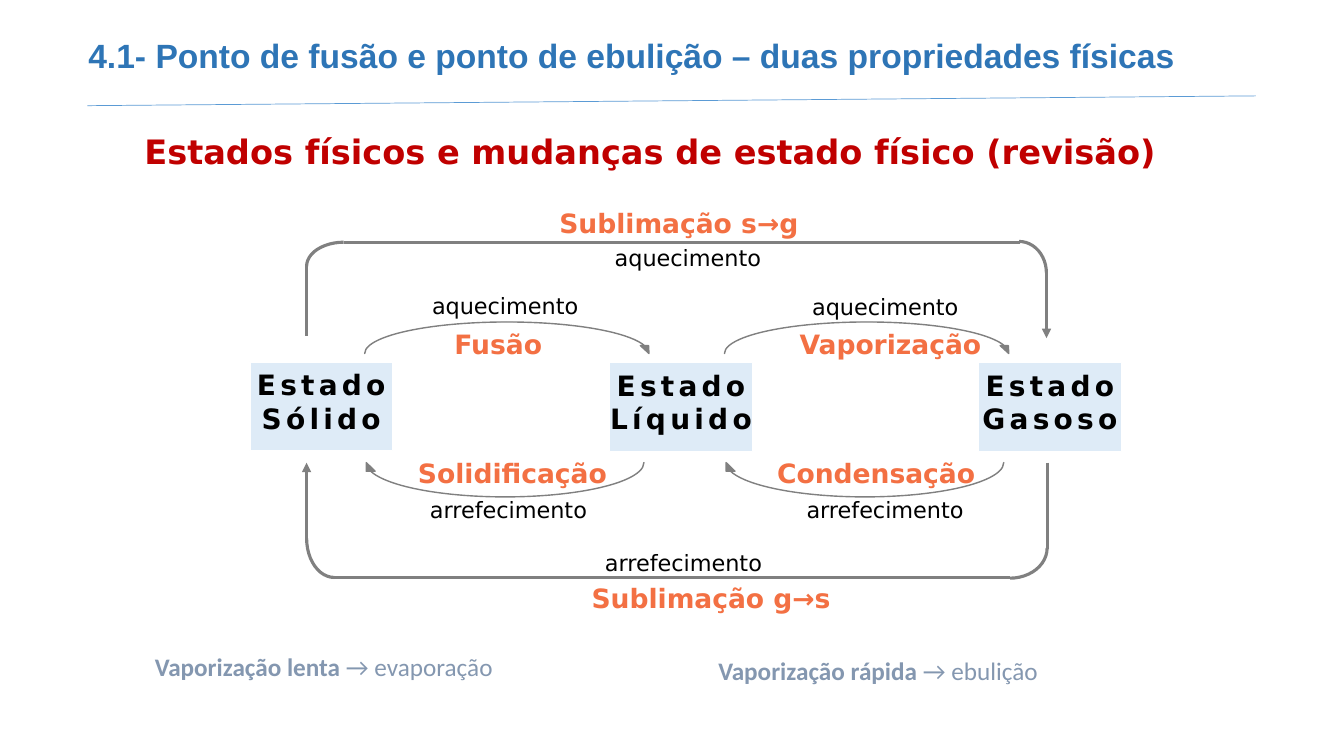
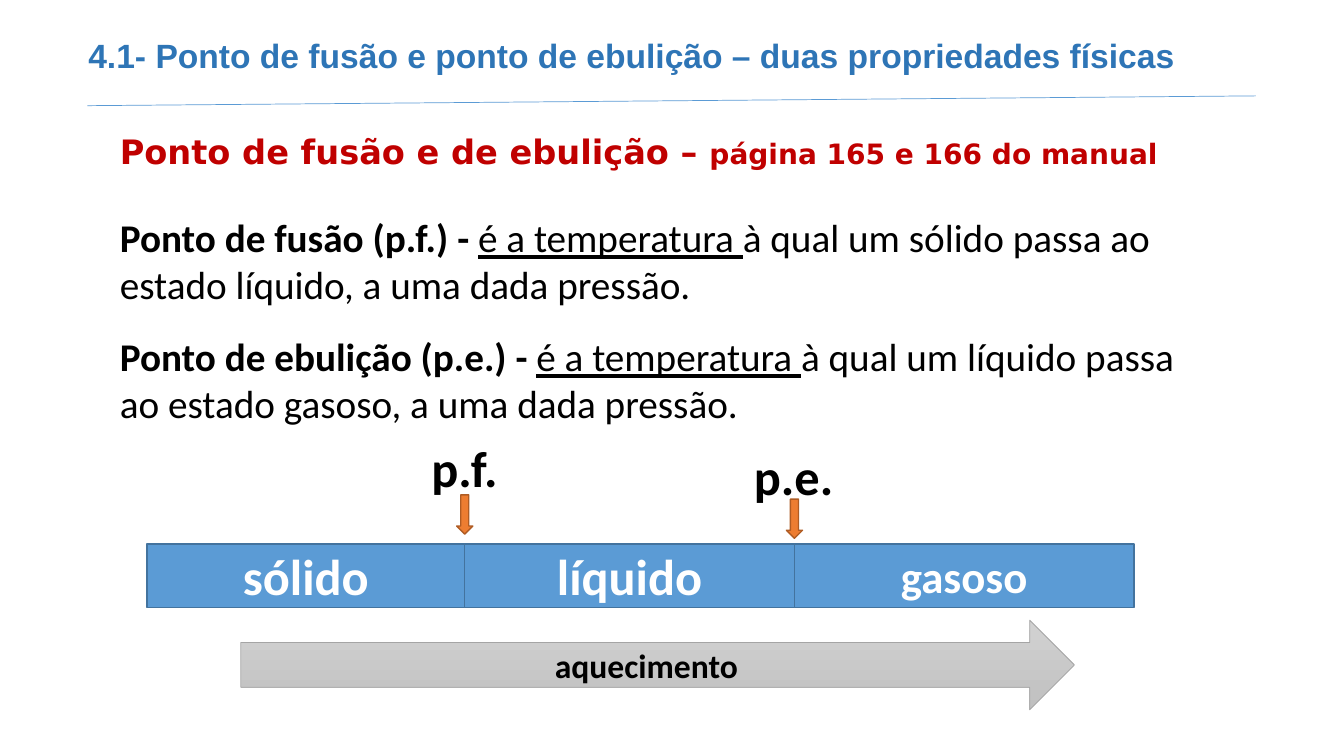
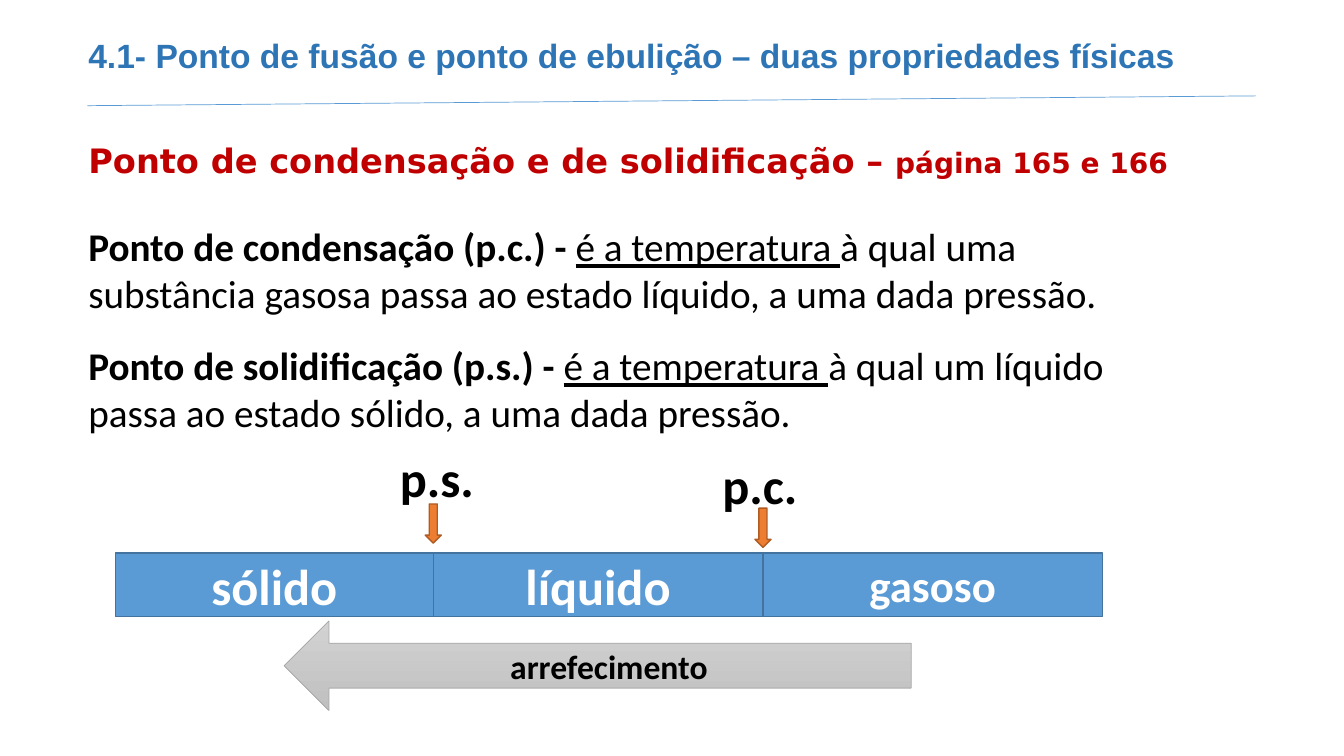
from lxml.etree import SubElement
from pptx import Presentation
from pptx.dml.color import RGBColor
from pptx.enum.shapes import MSO_CONNECTOR, MSO_SHAPE as Preset
from pptx.enum.text import MSO_ANCHOR as Anchor, MSO_AUTO_SIZE as AutoSize, PP_ALIGN as Align
from pptx.oxml.ns import qn
from pptx.util import Pt

GREY = "808080"
CHAPTER = "4.1- Ponto de fusão e ponto de ebulição – duas propriedades físicas"


def font_style(name, size, color, bold=False, **extra):
    return dict(name=name, size=Pt(size), color=color, bold=bold, **extra)


TITLE = font_style("Arial", 24, "2E75B6", True)
HEADING = font_style("DejaVu Sans", 24, "C00000", True)
PAGE_REF = HEADING | dict(size=Pt(20))
STATE = font_style("DejaVu Sans", 20, "000000", True, tracking=300)
CHANGE = font_style("DejaVu Sans", 19, "F37043", True)
FACTOR = font_style("DejaVu Sans", 16, "000000")
NOTE = font_style("Calibri", 18, "8497B0")
NOTE_TERM = NOTE | dict(bold=True)
BODY = font_style("Calibri", 28, "000000")
TERM = BODY | dict(bold=True)
KEY = BODY | dict(underline=True)
POINT = TERM | dict(size=Pt(36))
HEAT = TERM | dict(size=Pt(24))
BAND = POINT | dict(color="FFFFFF")
SMALL_BAND = BAND | dict(size=Pt(32))


def rgb(value):
    return RGBColor.from_string(value)


def pts(*lengths):
    return [Pt(length) for length in lengths]


def set_all(target, values):
    for name, value in values.items():
        setattr(target, name, value)


def write(frame, lines, align=Align.LEFT, **frame_format):
    set_all(frame, frame_format)
    for index, runs in enumerate(lines):
        paragraph = frame.add_paragraph() if index else frame.paragraphs[0]
        paragraph.alignment = align
        for text, style in runs:
            run = paragraph.add_run()
            run.text = text
            values = dict(style)
            run.font.color.rgb = rgb(values.pop("color"))
            tracking = values.pop("tracking", None)
            set_all(run.font, values)
            if tracking:
                run._r.get_or_add_rPr().set("spc", str(tracking))


def add_text(shapes, box, *runs, wrap=True):
    textbox = shapes.add_textbox(*pts(*box))
    write(textbox.text_frame, [runs], word_wrap=wrap, auto_size=AutoSize.SHAPE_TO_FIT_TEXT)


def add_preset(shapes, preset, box, fill, outline, weight=1, flip=""):
    shape = shapes.add_shape(preset, *pts(*box))
    shape.shadow.inherit = False
    if fill:
        shape.fill.solid()
        shape.fill.fore_color.rgb = rgb(fill)
    else:
        shape.fill.background()
    shape.line.color.rgb = rgb(outline)
    shape.line.width = Pt(weight)
    set_all(shape.element.spPr.xfrm, {"flip" + axis: True for axis in flip})
    return shape


def add_line(shapes, ends, color, weight, arrow=False):
    connector = shapes.add_connector(MSO_CONNECTOR.STRAIGHT, *pts(*ends))
    connector.line.color.rgb = rgb(color)
    connector.line.width = Pt(weight)
    properties = connector.element.spPr
    if arrow:
        SubElement(properties.find(qn("a:ln")), qn("a:tailEnd"), type="triangle")
    SubElement(properties, qn("a:effectLst"))


def add_sublimation_path(shapes, corners, segments):
    path_shapes = shapes.add_group_shape().shapes
    for box, flip in corners:
        add_preset(path_shapes, Preset.ARC, box, None, GREY, 2.25, flip)
    for ends in segments:
        add_line(path_shapes, ends, GREY, 2.25, arrow=ends == segments[-1])


def add_curved_arrow(shapes, box, flip=""):
    arrow = add_preset(shapes, Preset.CURVED_DOWN_ARROW, box, GREY, GREY, flip=flip)
    for index, value in enumerate((0, 0.26, 0.25)):
        arrow.adjustments[index] = value


def add_state(shapes, name, left, top):
    state = add_preset(shapes, Preset.RECTANGLE, (left, top, 102, 63.5), "DEEBF7", "FFFFFF")
    write(state.text_frame, [[("Estado", STATE)], [(name, STATE)]], Align.CENTER,
          word_wrap=False, vertical_anchor=Anchor.TOP,
          margin_left=0, margin_right=0, margin_top=Pt(4), margin_bottom=0)


def add_heat_arrow(shapes, preset, box, label):
    arrow = add_preset(shapes, preset, box, None, "A5A5A5", 0.5)
    arrow.fill.gradient()
    arrow.fill.gradient_angle = 270
    for stop, color in zip(arrow.fill.gradient_stops, ("D2D2D2", "C0C0C0")):
        stop.color.rgb = rgb(color)
    write(arrow.text_frame, [[(label, HEAT)]], Align.CENTER, vertical_anchor=Anchor.MIDDLE)


def add_page(deck):
    shapes = deck.slides.add_slide(deck.slide_layouts[6]).shapes
    add_line(shapes, (62.5, 75.5, 897, 68.5), "5B9BD5", 0.5)
    add_text(shapes, (56, 21.5, 790.5, 36), (CHAPTER, TITLE), wrap=False)
    return shapes


def build_state_changes(shapes):
    add_text(shapes, (96, 90, 741.5, 36),
             ("Estados físicos e mudanças de estado físico (revisão)", HEADING), wrap=False)

    for name, left, top in (("Sólido", 178.5, 258.5), ("Líquido", 435.5, 259), ("Gasoso", 699, 259)):
        add_state(shapes, name, left, top)

    add_sublimation_path(
        shapes,
        [((708.5, 172.5, 39, 45), ""), ((219, 173, 53, 34.5), "H")],
        [(219, 240, 219, 189.5), (245.5, 173, 728.5, 173), (747.5, 195, 747.5, 241.5)])
    add_sublimation_path(
        shapes,
        [((219, 356.5, 39.5, 56), "HV"), ((695, 370, 53, 43), "V")],
        [(748, 330.5, 748, 392.5), (721.5, 412.5, 237.5, 412.5), (219, 385, 219, 330.5)])

    for left in (260.5, 517.5):
        add_curved_arrow(shapes, (left, 230, 206, 22.5))
        add_curved_arrow(shapes, (left - 2, 330.5, 201.5, 24.5), "HV")

    for name, left, top, width in (
            ("Sublimação s→g", 392.5, 144, 227.5), ("Sublimação g→s", 415.5, 412, 264),
            ("Fusão", 317.5, 230.5, 187), ("Vaporização", 564, 231, 187),
            ("Solidificação", 291.5, 322.5, 187), ("Condensação", 548, 322.5, 187)):
        add_text(shapes, (left, top, width, 30), (name, CHANGE))

    for name, places in (
            ("aquecimento", ((432, 170.5), (301.5, 205), (573, 206))),
            ("arrefecimento", ((300, 350.5), (569, 350.5), (425, 389)))):
        for left, top in places:
            add_text(shapes, (left, top, 187, 26.5), (name, FACTOR))

    for term, meaning, left, top, width in (
            ("Vaporização lenta ", "→ evaporação", 103.5, 461.5, 299),
            ("Vaporização rápida ", "→ ebulição", 506, 464.5, 283.5)):
        add_text(shapes, (left, top, width, 32.5), (term, NOTE_TERM), (meaning, NOTE), wrap=False)


def build_points(shapes, left, top, heading, page_ref, heading_width, definitions, labels):
    add_text(shapes, (left, top, heading_width, 36),
             (heading, HEADING), (page_ref, PAGE_REF), wrap=False)

    for row, (term, meaning) in enumerate(definitions):
        add_text(shapes, (left, top + 59 + 85 * row, 790, 75),
                 (term, TERM), ("é a temperatura ", KEY), (meaning, BODY))

    band_left = left + 26.5
    boundaries = []
    for name, width, style in (("sólido", 227, BAND), ("líquido", 235.5, BAND),
                               ("gasoso", 242.5, SMALL_BAND)):
        band = add_preset(shapes, Preset.RECTANGLE, (band_left, top + 298.5, width, 45.5),
                          "5B9BD5", "43739E")
        write(band.text_frame, [[(name, style)]], Align.CENTER, vertical_anchor=Anchor.MIDDLE)
        band_left += width
        boundaries.append(band_left)

    offsets = ((31, 219, 263.5), (36, 224.5, 266.5))
    for boundary, (label, width), (shift, label_top, marker_top) in zip(boundaries, labels, offsets):
        add_preset(shapes, Preset.DOWN_ARROW, (boundary - 5.75, top + marker_top, 11.5, 28),
                   "ED7D31", "AF5C24")
        add_text(shapes, (boundary - shift, top + label_top, width, 51), (label, POINT), wrap=False)


def main():
    deck = Presentation()
    set_all(deck, dict(slide_width=Pt(960), slide_height=Pt(540)))

    build_state_changes(add_page(deck))

    heating = add_page(deck)
    build_points(
        heating, 78.5, 90, "Ponto de fusão e de ebulição – ", "página 165 e 166 do manual", 764,
        [("Ponto de fusão (p.f.) - ",
          "à qual um sólido passa ao estado líquido, a uma dada pressão."),
         ("Ponto de ebulição (p.e.) - ",
          "à qual um líquido passa ao estado gasoso, a uma dada pressão.")],
        [("p.f.", 62.5), ("p.e.", 72)])
    add_heat_arrow(heating, Preset.RIGHT_ARROW, (172, 443, 595.5, 64), "aquecimento")

    cooling = add_page(deck)
    build_points(
        cooling, 56, 96.5, "Ponto de condensação e de solidificação – ", "página 165 e 166", 821.5,
        [("Ponto de condensação (p.c.) - ",
          "à qual uma substância gasosa passa ao estado líquido, a uma dada pressão."),
         ("Ponto de solidificação (p.s.) - ",
          "à qual um líquido passa ao estado sólido, a uma dada pressão.")],
        [("p.s.", 68.5), ("p.c.", 69)])
    add_heat_arrow(cooling, Preset.LEFT_ARROW, (203, 443.5, 448, 64), "arrefecimento")

    deck.save("out.pptx")


if __name__ == "__main__":
    main()
